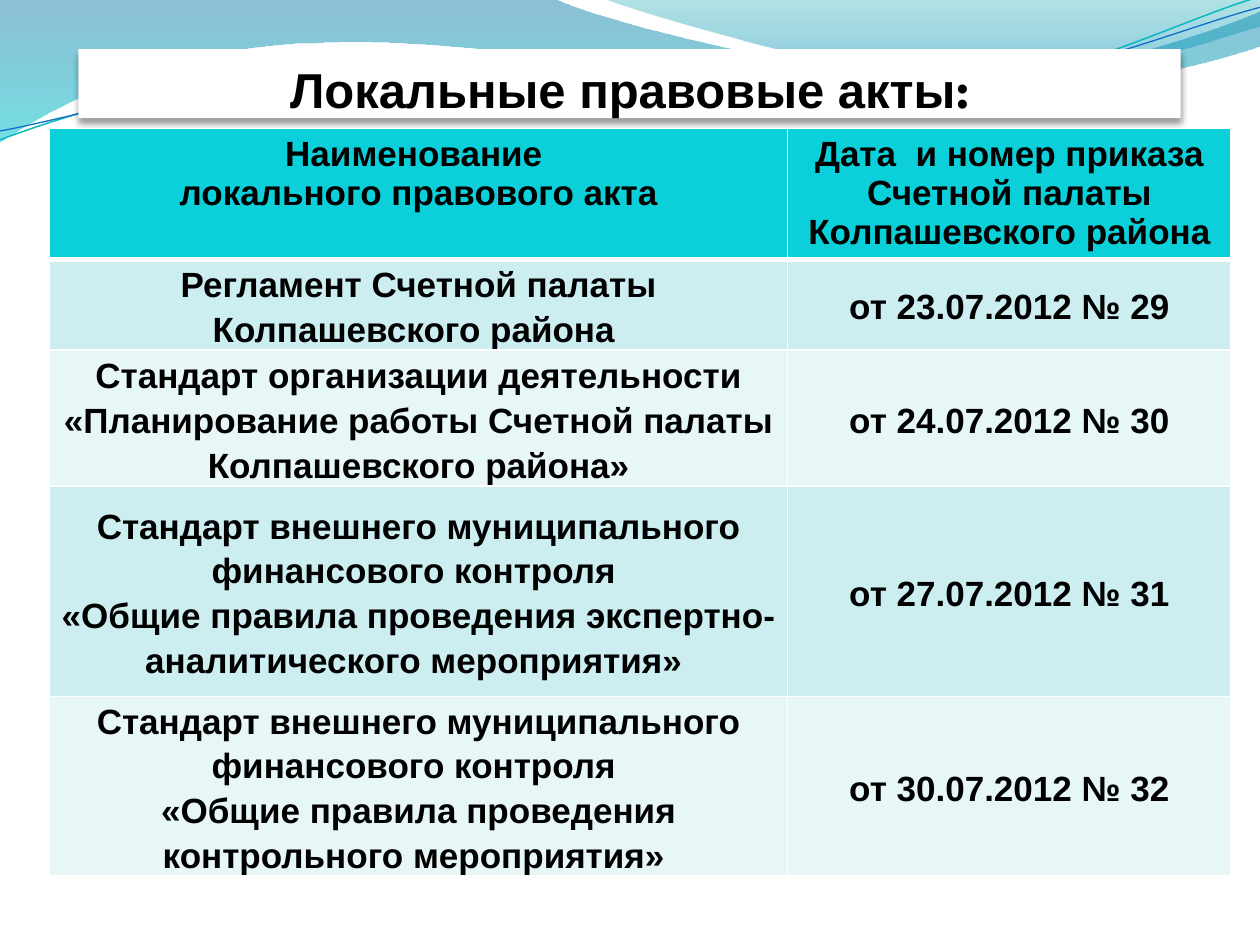
from lxml.etree import SubElement
from pptx import Presentation
from pptx.dml.color import RGBColor
from pptx.enum.text import MSO_ANCHOR as Anchor, MSO_AUTO_SIZE as AutoSize, PP_ALIGN as Align
from pptx.oxml import parse_xml
from pptx.oxml.ns import nsdecls, qn
from pptx.util import Cm, Pt

BLACK = RGBColor(0x00, 0x00, 0x00)
WHITE = RGBColor(0xFF, 0xFF, 0xFF)
HEADER = RGBColor(0x0B, 0xD0, 0xD9)
BANDS = (RGBColor(0xCC, 0xEE, 0xF1), RGBColor(0xE7, 0xF7, 0xF8))
DEEP_BLUE = RGBColor(0x00, 0x74, 0xA1)
AQUA = RGBColor(0x00, 0xC6, 0xCF)
TEAL = RGBColor(0x00, 0xA1, 0xA9)
SKY = RGBColor(0x00, 0x8B, 0xBF)
LINE_TEAL = RGBColor(0x0A, 0xB8, 0xBF)
LINE_BLUE = RGBColor(0x0F, 0x6F, 0xC6)

WAVES = [
    ([(0, -0.03), (11.18, -0.03),
      (12.09, 0.43, 16.87, 1.6, 19.25, 1.6), (21.67, 1.6, 24.33, 0.66, 25.4, 0.23),
      (25.43, 0.91), (24.97, 1.12, 22.1, 1.93, 18.95, 1.91),
      (15.8, 1.91, 9.7, 0.71, 6.53, 0.86), (3.28, 0.89, 1.17, 2.11, -0.03, 2.87)],
     [(0, DEEP_BLUE, 45), (1, AQUA, 55)]),
    ([(12.17, -0.03), (12.93, 0.28, 17.32, 1.57, 19.53, 1.65),
      (21.74, 1.75, 24.41, 0.81, 25.4, 0.53), (25.4, 0)],
     [(0, TEAL, 30), (0.8, SKY, 45)]),
]
STRANDS = [
    ([(0, 2.82), (1.22, 2.36, 4.01, 1.45, 7.04, 1.32),
      (10.03, 1.19, 15.06, 2.26, 18.11, 2.03), (21.16, 1.8, 23.83, 0.38, 25.35, -0.05)],
     LINE_TEAL, 0.85),
    ([(0, 2.64), (1.19, 2.44, 4.17, 1.55, 7.19, 1.42),
      (10.24, 1.3, 15.16, 2.11, 18.21, 1.91), (21.23, 1.7, 23.9, 0.53, 25.4, 0.15)],
     LINE_BLUE, 0.75),
]
TITLE = [("Локальные правовые акты", "Arial"), (":", "TeX Gyre Schola")]
COLUMNS = (14.88, 8.94)
ROWS = (2.64, 1.83, 2.74, 4.24, 3.59)
CONTROL = "Стандарт внешнего муниципального финансового контроля "
ACTS = [
    (["Наименование ", "локального правового акта"],
     ["Дата  и номер приказа", "Счетной палаты Колпашевского района"]),
    (["Регламент Счетной палаты Колпашевского района "], ["от 23.07.2012 № 29"]),
    (["Стандарт организации деятельности «Планирование работы Счетной палаты "
      "Колпашевского района»"], ["от 24.07.2012 № 30"]),
    ([CONTROL, "«Общие правила проведения экспертно-аналитического мероприятия» "],
     ["от 27.07.2012 № 31"]),
    ([CONTROL, "«Общие правила проведения контрольного мероприятия» "],
     ["от 30.07.2012 № 32"]),
]


def add_text(paragraph, text, size=20, font="Arial", color=BLACK, bold=True):
    run = paragraph.add_run()
    run.text = text
    run.font.size = Pt(size)
    run.font.name = font
    run.font.bold = bold
    run.font.color.rgb = color


class ActsSlide:
    """Holds the current slide and draws its elements in one style."""

    def __init__(self, presentation):
        self.layout = presentation.slide_layouts[5]
        self.slide = presentation.slides.add_slide(self.layout)

    def curve(self, segments, close):
        points = [(x * 1000, y * 1000) for segment in segments
                  for x, y in zip(segment[::2], segment[1::2])]
        builder = self.slide.shapes.build_freeform(*points[0], scale=Cm(0.001))
        builder.add_line_segments(points[1:], close=close)
        shape = builder.convert_to_shape()
        shape.shadow.inherit = False
        lines = iter(list(shape.element.iter(qn("a:lnTo"))))
        for segment in segments[1:]:
            line = next(lines)
            if len(segment) == 6:
                line.tag = qn("a:cubicBezTo")
                for _ in range(2):
                    extra = next(lines)
                    line.append(extra[0])
                    extra.getparent().remove(extra)
        self.layout.shapes.element.append(shape.element)
        return shape

    def wave(self, segments, stops):
        shape = self.curve(segments, True)
        shape.line.fill.background()
        shape.fill.gradient()
        shape.fill.gradient_angle = 270
        for stop, (position, color, _) in zip(shape.fill.gradient_stops, stops):
            stop.position = position
            stop.color.rgb = color
        for node, (_, _, opacity) in zip(shape.element.spPr.iter(qn("a:srgbClr")), stops):
            SubElement(node, qn("a:alpha"), val=str(opacity * 1000))

    def strand(self, segments, color, width):
        shape = self.curve(segments, False)
        shape.fill.background()
        shape.line.color.rgb = color
        shape.line.width = Pt(width)

    def title(self, runs):
        title = self.slide.shapes.title
        title.left, title.top, title.width, title.height = Cm(1.58), Cm(0.99), Cm(22.22), Cm(1.39)
        title.fill.solid()
        title.fill.fore_color.rgb = WHITE
        title.element.spPr.append(parse_xml(
            f'<a:effectLst {nsdecls("a")}><a:outerShdw blurRad="50800" dist="38100" '
            'dir="5400000" algn="t" rotWithShape="0"><a:srgbClr val="000000">'
            '<a:alpha val="40000"/></a:srgbClr></a:outerShdw></a:effectLst>'))
        frame = title.text_frame
        frame.auto_size = AutoSize.NONE
        frame.word_wrap = True
        frame.vertical_anchor = Anchor.BOTTOM
        frame.margin_left = frame.margin_right = frame.margin_bottom = 0
        frame.margin_top = Cm(0.13)
        paragraph = frame.paragraphs[0]
        paragraph.alignment = Align.CENTER
        for text, font in runs:
            add_text(paragraph, text, size=28, font=font)

    def table(self, acts):
        table = self.slide.shapes.add_table(
            len(ROWS), len(COLUMNS), Cm(1), Cm(2.59), Cm(sum(COLUMNS)), Cm(sum(ROWS))).table
        for column, width in zip(table.columns, COLUMNS):
            column.width = Cm(width)
        for index, (row, height) in enumerate(zip(table.rows, ROWS)):
            row.height = Cm(height)
            for cell, lines in zip(row.cells, acts[index]):
                self.cell(cell, lines, index)

    def cell(self, cell, lines, row):
        cell.fill.solid()
        cell.fill.fore_color.rgb = BANDS[(row - 1) % 2] if row else HEADER
        if row:
            cell.vertical_anchor = Anchor.MIDDLE
            cell.margin_left = cell.margin_right = Cm(0.18)
            cell.margin_top = cell.margin_bottom = 0
        widths = {"L": 1, "R": 1, "T": 3 if row == 1 else 1, "B": 1 if row else 3}
        properties = cell._tc.get_or_add_tcPr()
        for position, (side, width) in enumerate(widths.items()):
            properties.insert(position, parse_xml(
                f'<a:ln{side} {nsdecls("a")} w="{Pt(width)}"><a:solidFill>'
                f'<a:srgbClr val="{WHITE}"/></a:solidFill></a:ln{side}>'))
        frame = cell.text_frame
        for index, line in enumerate(lines):
            paragraph = frame.add_paragraph() if index else frame.paragraphs[0]
            paragraph.alignment = Align.CENTER
            if row:
                paragraph.line_spacing = 1.15
            add_text(paragraph, line)


def main():
    presentation = Presentation()
    presentation.slide_width, presentation.slide_height = Cm(25.4), Cm(19.05)
    page = ActsSlide(presentation)
    for wave in WAVES:
        page.wave(*wave)
    for strand in STRANDS:
        page.strand(*strand)
    page.title(TITLE)
    page.table(ACTS)
    presentation.save("out.pptx")


if __name__ == "__main__":
    main()
